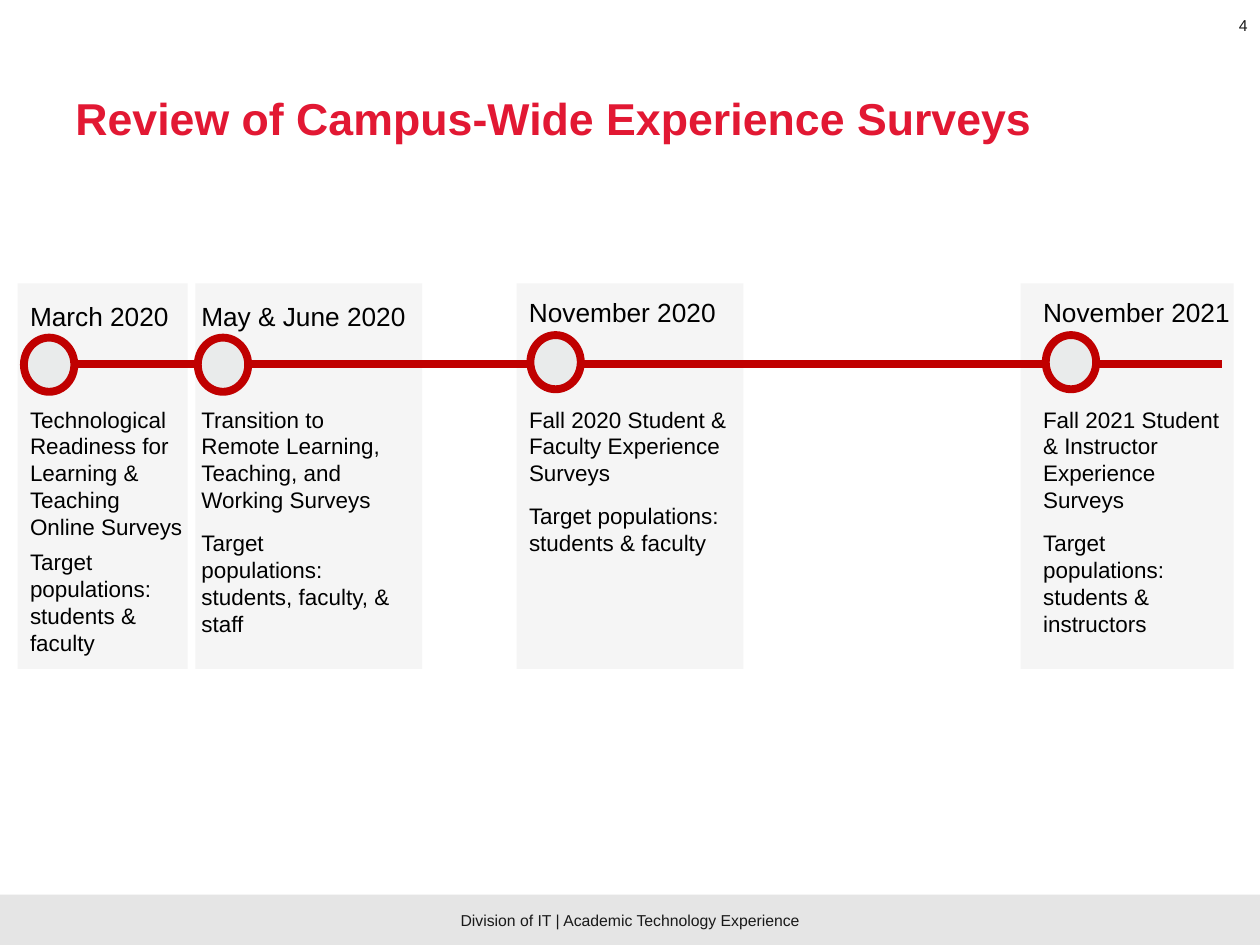
from dataclasses import dataclass

from lxml import etree
from pptx import Presentation
from pptx.dml.color import RGBColor
from pptx.enum import shapes, text
from pptx.oxml.ns import qn
from pptx.util import Inches, Pt

COLORS = {
    "title": "E21833",
    "timeline": "C00000",
    "marker": "E9EBEB",
    "panel": "F2F2F2",
    "footer": "E5E5E5",
    "small": "191919",
    "body": "000000",
}
FONT = "Arial"
PANEL_TOP, PANEL_HEIGHT, PANEL_OPACITY = 2.25, 3.06, 74
MARKER_WIDTH, MARKER_HEIGHT = 0.4, 0.43
DATE_HEIGHT, DETAIL_TOP = 0.35, 3.17
TIMELINE_Y, TIMELINE_WIDTH = 2.89, 4.5


@dataclass
class Survey:
    date: str
    name: str
    population: str
    panel_left: float
    panel_width: float
    marker_left: float
    marker_top: float
    text_left: float
    date_top: float
    date_width: float
    detail_width: float
    detail_height: float
    gap: float = 9.1


SURVEYS = [
    Survey("March 2020",
           "Technological Readiness for Learning & Teaching Online Surveys",
           "students & faculty",
           0.14, 1.35, 0.19, 2.68, 0.14, 2.33, 1.48, 1.44, 2.1, gap=4.7),
    Survey("May & June 2020",
           "Transition to Remote Learning, Teaching, and Working Surveys",
           "students, faculty, & staff",
           1.55, 1.8, 1.57, 2.68, 1.5, 2.33, 2.04, 1.7, 1.94),
    Survey("November 2020",
           "Fall 2020 Student & Faculty Experience Surveys",
           "students & faculty",
           4.1, 1.8, 4.21, 2.66, 4.1, 2.3, 1.8, 2.08, 1.51),
    Survey("November 2021",
           "Fall 2021 Student & Instructor Experience Surveys",
           "students & instructors",
           8.1, 1.69, 8.3, 2.66, 8.18, 2.3, 1.8, 1.61, 2.37),
]


def color(name: str) -> RGBColor:
    return RGBColor.from_string(COLORS[name])


def write(shape, content: str, size: float, ink: str, bold: bool = False,
          align=text.PP_ALIGN.LEFT, anchor=text.MSO_ANCHOR.TOP) -> None:
    frame = shape.text_frame
    frame.word_wrap = True
    frame.vertical_anchor = anchor
    frame.text = content
    for paragraph in frame.paragraphs:
        paragraph.alignment = align
        for run in paragraph.runs:
            run.font.name = FONT
            run.font.size = Pt(size)
            run.font.bold = bold
            run.font.color.rgb = color(ink)


def add_text(slide, left: float, top: float, width: float, height: float,
             content: str, size: float, ink: str, **style):
    box = slide.shapes.add_textbox(
        Inches(left), Inches(top), Inches(width), Inches(height))
    write(box, content, size, ink, **style)
    return box


def add_block(slide, kind, left: float, top: float, width: float,
              height: float, fill: str):
    block = slide.shapes.add_shape(
        kind, Inches(left), Inches(top), Inches(width), Inches(height))
    block.shadow.inherit = False
    block.fill.solid()
    block.fill.fore_color.rgb = color(fill)
    block.line.fill.background()
    return block


def add_panel(slide, survey: Survey) -> None:
    panel = add_block(slide, shapes.MSO_SHAPE.RECTANGLE, survey.panel_left,
                      PANEL_TOP, survey.panel_width, PANEL_HEIGHT, "panel")
    fill_color = panel.fill._xPr.find(qn("a:solidFill"))[0]
    etree.SubElement(fill_color, qn("a:alpha"), val=str(PANEL_OPACITY * 1000))


def add_timeline(slide) -> None:
    timeline = slide.shapes.add_connector(
        shapes.MSO_CONNECTOR.STRAIGHT, Inches(0.3), Inches(TIMELINE_Y),
        Inches(9.7), Inches(TIMELINE_Y))
    timeline.line.color.rgb = color("timeline")
    timeline.line.width = Pt(TIMELINE_WIDTH)
    etree.SubElement(timeline._element.spPr, qn("a:effectLst"))


def add_marker(slide, survey: Survey) -> None:
    marker = add_block(slide, shapes.MSO_SHAPE.OVAL, survey.marker_left,
                       survey.marker_top, MARKER_WIDTH, MARKER_HEIGHT, "marker")
    marker.line.color.rgb = color("timeline")
    marker.line.width = Pt(TIMELINE_WIDTH)


def add_labels(slide, survey: Survey) -> None:
    add_text(slide, survey.text_left, survey.date_top, survey.date_width,
             DATE_HEIGHT, survey.date, 15, "body")
    details = add_text(
        slide, survey.text_left, DETAIL_TOP, survey.detail_width,
        survey.detail_height,
        f"{survey.name}\nTarget populations: {survey.population}", 12.8, "body")
    details.text_frame.paragraphs[1].space_before = Pt(survey.gap)


def main() -> None:
    deck = Presentation()
    deck.slide_width, deck.slide_height = Inches(10), Inches(7.5)
    slide = deck.slides.add_slide(deck.slide_layouts[6])
    middle = text.MSO_ANCHOR.MIDDLE

    # Page number, footer and title
    add_text(slide, 7.67, 0, 2.33, 0.4, "4", 9, "small",
             align=text.PP_ALIGN.RIGHT, anchor=middle)
    footer = add_block(slide, shapes.MSO_SHAPE.RECTANGLE, 0, 7.1, 10, 0.4,
                       "footer")
    write(footer, "Division of IT | Academic Technology Experience", 9, "small",
          align=text.PP_ALIGN.CENTER, anchor=middle)
    add_text(slide, 0.5, 0.31, 9, 1.25,
             "Review of Campus-Wide Experience Surveys", 25.5, "title",
             bold=True, anchor=middle)

    # Panels lie behind the timeline, markers and labels in front
    for survey in SURVEYS:
        add_panel(slide, survey)
    add_timeline(slide)
    for survey in SURVEYS:
        add_marker(slide, survey)
        add_labels(slide, survey)

    deck.save("out.pptx")


if __name__ == "__main__":
    main()
